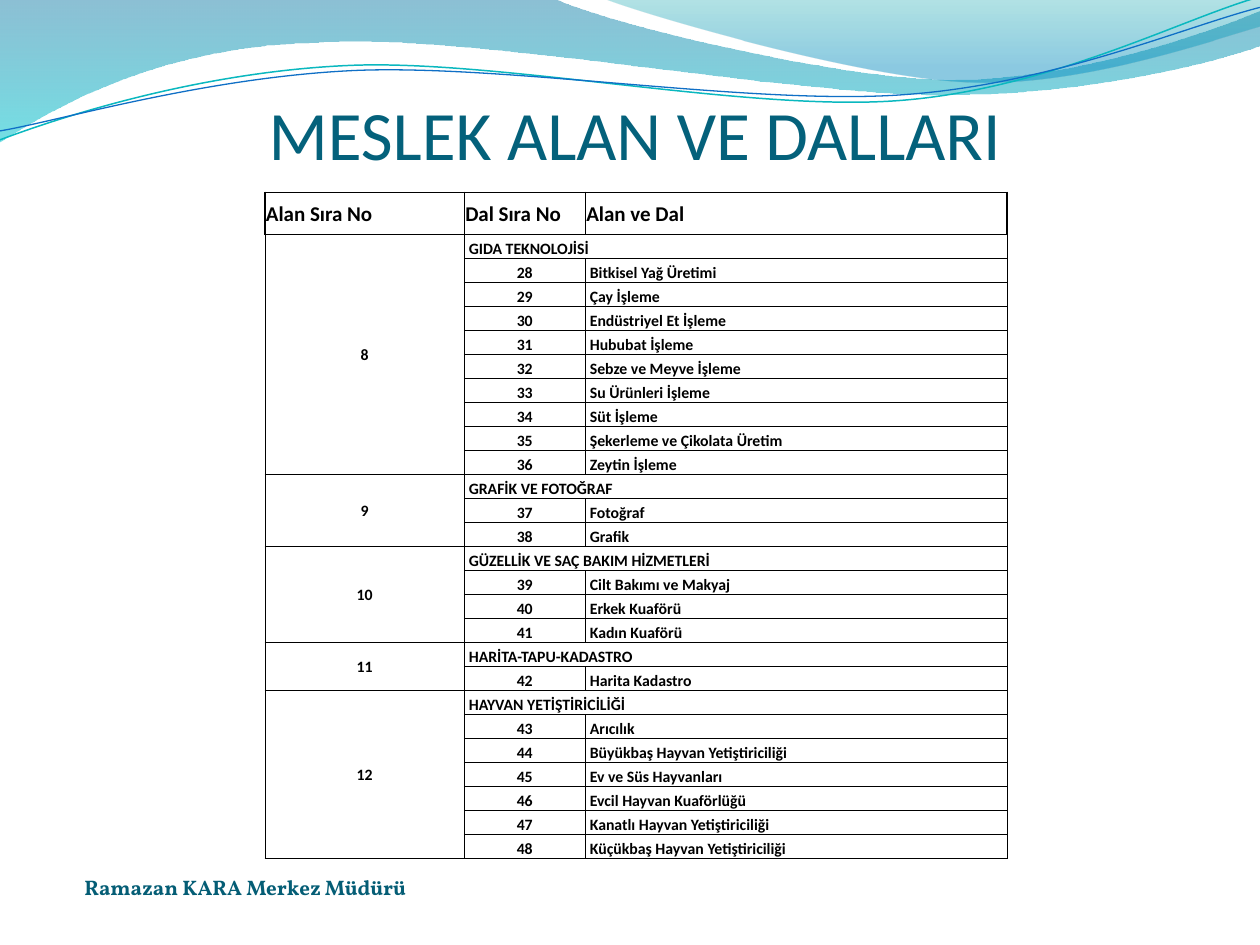
from lxml.etree import SubElement
from pptx import Presentation
from pptx.dml.color import RGBColor
from pptx.enum.text import MSO_ANCHOR as Anchor, PP_ALIGN as Align
from pptx.oxml.ns import qn
from pptx.util import Cm, Pt

PAGE_W, PAGE_H = 25.4, 19.05
COLUMNS = (4.02, 2.44, 8.5)
HEADER_HEIGHT = 0.85
HEADINGS = ("Alan Sıra No", "Dal Sıra No", "Alan ve Dal")
FIRST_FIELD, FIRST_BRANCH = 8, 28
FIELDS = {
    "GIDA TEKNOLOJİSİ": (
        "Bitkisel Yağ Üretimi", "Çay İşleme", "Endüstriyel Et İşleme",
        "Hububat İşleme", "Sebze ve Meyve İşleme", "Su Ürünleri İşleme",
        "Süt İşleme", "Şekerleme ve Çikolata Üretim", "Zeytin İşleme"),
    "GRAFİK VE FOTOĞRAF": ("Fotoğraf", "Grafik"),
    "GÜZELLİK VE SAÇ BAKIM HİZMETLERİ": (
        "Cilt Bakımı ve Makyaj", "Erkek Kuaförü", "Kadın Kuaförü"),
    "HARİTA-TAPU-KADASTRO": ("Harita Kadastro",),
    "HAYVAN YETİŞTİRİCİLİĞİ": (
        "Arıcılık", "Büyükbaş Hayvan Yetiştiriciliği", "Ev ve Süs Hayvanları",
        "Evcil Hayvan Kuaförlüğü", "Kanatlı Hayvan Yetiştiriciliği",
        "Küçükbaş Hayvan Yetiştiriciliği"),
}

# Wave outlines in cm: two numbers are a line end, six a Bézier curve
BAND = ((0, 0), (11.18, -0.02), (12.09, 0.43, 16.87, 1.6, 19.25, 1.6),
        (21.67, 1.6, 24.33, 0.66, 25.4, 0.23), (25.43, 0.91),
        (24.97, 1.12, 22.1, 1.93, 18.95, 1.91),
        (15.8, 1.91, 9.7, 0.71, 6.53, 0.86),
        (3.28, 0.91, 1.17, 2.11, -0.03, 2.87))
VEIL = ((12.17, -0.03), (12.93, 0.28, 17.32, 1.57, 19.53, 1.65),
        (21.74, 1.75, 24.41, 0.81, 25.4, 0.53), (25.4, 0))
TEAL_LINE = ((0, 2.82), (1.22, 2.36, 4.01, 1.45, 7.04, 1.32),
             (10.03, 1.19, 15.06, 2.26, 18.11, 2.03),
             (21.16, 1.8, 23.83, 0.38, 25.35, -0.05))
BLUE_LINE = ((0, 2.64), (1.19, 2.44, 4.17, 1.55, 7.19, 1.42),
             (10.24, 1.3, 15.21, 2.13, 18.21, 1.91),
             (21.23, 1.7, 23.9, 0.53, 25.4, 0.15))


def color(value):
    return RGBColor.from_string(value)


def add_wave(page, box, outline, closed):
    """Build the outline through its end points, then bend the curved parts."""
    left, top = box
    ends = [(Cm(left + part[-2]), Cm(top + part[-1])) for part in outline]
    builder = page.shapes.build_freeform(*ends[0])
    builder.add_line_segments(ends[1:], close=closed)
    wave = builder.convert_to_shape()
    wave.shadow.inherit = False
    segments = list(wave.element.spPr.iter(qn("a:lnTo")))
    for segment, part in zip(segments, outline[1:]):
        if len(part) == 6:
            segment.tag = qn("a:cubicBezTo")
            segment.clear()
            for x, y in zip(part[::2], part[1::2]):
                SubElement(segment, qn("a:pt"), x=str(Cm(left + x) - wave.left),
                           y=str(Cm(top + y) - wave.top))
    return wave


def fill_gradient(shape, stops):
    """Fill from top to bottom with (position, color, opacity) stops."""
    shape.fill.gradient()
    gradient = shape.element.spPr.find(qn("a:gradFill"))
    for child in list(gradient):
        gradient.remove(child)
    stop_list = SubElement(gradient, qn("a:gsLst"))
    for position, value, opacity in stops:
        stop = SubElement(stop_list, qn("a:gs"), pos=str(position * 1000))
        tint = SubElement(stop, qn("a:srgbClr"), val=value)
        SubElement(tint, qn("a:alpha"), val=str(opacity * 1000))
    SubElement(gradient, qn("a:lin"), ang="5400000", scaled="0")


def add_waves(page, box):
    for outline, stops in (
            (BAND, ((0, "0074A1", 45), (100, "00C6CF", 55))),
            (VEIL, ((0, "00A1A9", 30), (80, "008BBF", 45)))):
        wave = add_wave(page, box, outline, True)
        fill_gradient(wave, stops)
        wave.line.fill.background()
    for outline, value, width in ((TEAL_LINE, "0AB8BF", 0.85),
                                  (BLUE_LINE, "0F6FC6", 0.75)):
        wave = add_wave(page, box, outline, False)
        wave.fill.background()
        wave.line.color.rgb = color(value)
        wave.line.width = Pt(width)


def format_text(frame, size, font, value, bold, align):
    para = frame.paragraphs[0]
    para.alignment = align
    for span in para.runs:
        span.font.size, span.font.name = Pt(size), font
        span.font.bold = bold
        span.font.color.rgb = color(value)


def add_label(page, box, text, top_inset, *style):
    frame = page.shapes.add_textbox(*map(Cm, box)).text_frame
    frame.word_wrap = True
    frame.vertical_anchor = Anchor.BOTTOM
    frame.margin_left = frame.margin_right = frame.margin_bottom = 0
    frame.margin_top = Cm(top_inset)
    frame.text = text
    format_text(frame, *style)


def set_borders(cell, widths):
    properties = cell._tc.get_or_add_tcPr()
    for side, width in zip("LRTB", widths):
        line = SubElement(properties, qn(f"a:ln{side}"), w=str(Pt(width)))
        fill = SubElement(line, qn("a:solidFill"))
        SubElement(fill, qn("a:srgbClr"), val="000000")


def write_cell(cell, text, size=9, align=Align.LEFT, anchor=Anchor.BOTTOM):
    cell.text = text
    cell.vertical_anchor = anchor
    format_text(cell.text_frame, size, "Calibri", "000000", True, align)


def add_field_table(page, box):
    row_count = 1 + sum(1 + len(branches) for branches in FIELDS.values())
    table = page.shapes.add_table(row_count, len(COLUMNS), *map(Cm, box)).table
    table.first_row = table.horz_banding = False
    for column, width in zip(table.columns, COLUMNS):
        column.width = Cm(width)
    for row in table.rows:
        row.height = Cm((box[3] - HEADER_HEIGHT) / (row_count - 1))
    table.rows[0].height = Cm(HEADER_HEIGHT)

    # Borders, insets and empty fill
    last = len(COLUMNS) - 1
    for index, cell in enumerate(table.iter_cells()):
        row, column = divmod(index, len(COLUMNS))
        header = row == 0
        set_borders(cell, (1 if header and column == 0 else 0.5,
                           1 if header and column == last else 0.5,
                           1 if header else 0.5, 0.5))
        cell.fill.background()
        cell.margin_left = cell.margin_right = cell.margin_top = Cm(0.02)
        cell.margin_bottom = 0

    # Header, then one block of rows for each field
    for column, heading in enumerate(HEADINGS):
        write_cell(table.cell(0, column), heading, 12, anchor=Anchor.MIDDLE)
    row, branch_number = 1, FIRST_BRANCH
    for number, (field, branches) in enumerate(FIELDS.items(), FIRST_FIELD):
        table.cell(row, 0).merge(table.cell(row + len(branches), 0))
        table.cell(row, 1).merge(table.cell(row, 2))
        write_cell(table.cell(row, 0), str(number),
                   align=Align.CENTER, anchor=Anchor.MIDDLE)
        write_cell(table.cell(row, 1), f" {field}")
        row += 1
        for branch in branches:
            write_cell(table.cell(row, 1), str(branch_number), align=Align.CENTER)
            write_cell(table.cell(row, 2), f" {branch}")
            row += 1
            branch_number += 1


def main():
    deck = Presentation()
    deck.slide_width, deck.slide_height = Cm(PAGE_W), Cm(PAGE_H)
    page = deck.slides.add_slide(deck.slide_layouts[6])
    add_waves(page, (0, 0))
    add_label(page, (4.7, 1.92, 16.2, 1.6), "MESLEK ALAN VE DALLARI", 0.13,
              39.6, "Calibri", "04617B", False, Align.CENTER)
    add_label(page, (1.7, 17.12, 6.68, 1.02), "Ramazan KARA Merkez Müdürü", 0,
              12, "Vollkorn", "045D75", True, Align.LEFT)
    add_field_table(page, (5.34, 3.88, sum(COLUMNS), 13.44))
    deck.save("out.pptx")


if __name__ == "__main__":
    main()
